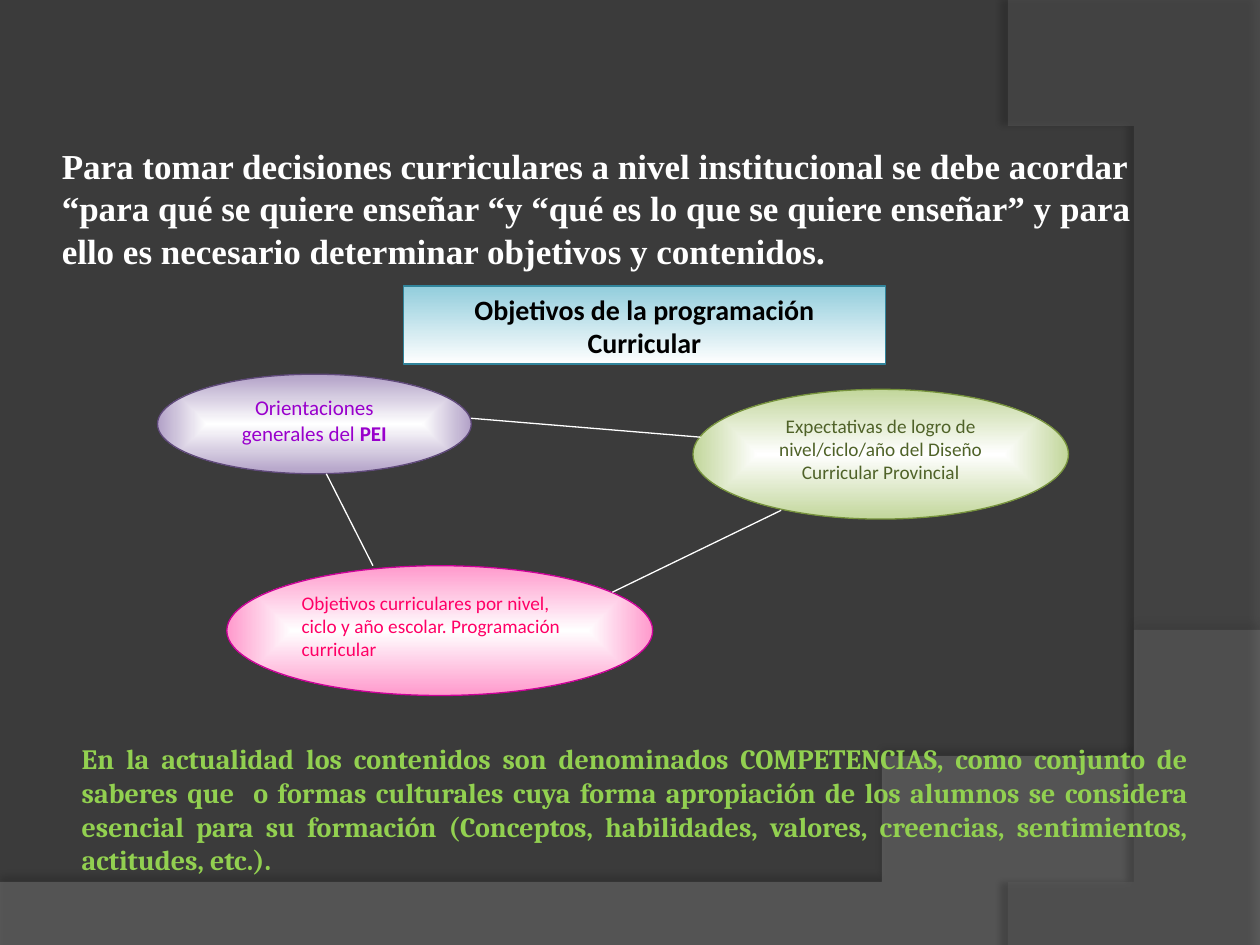
from dataclasses import dataclass

from pptx import Presentation
from pptx.dml.color import RGBColor
from pptx.enum.shapes import MSO_CONNECTOR, MSO_SHAPE
from pptx.enum.text import MSO_ANCHOR, MSO_AUTO_SIZE, PP_ALIGN
from pptx.oxml import parse_xml
from pptx.oxml.ns import nsdecls
from pptx.oxml.xmlchemy import OxmlElement
from pptx.util import Inches, Pt

Point = tuple[float, float]
STEPS = 60


@dataclass
class Swoosh:
    edge: list[Point]
    curve: list[Point]
    color: str
    alpha: int
    shadow_alpha: int
    shadow_distance: float
    shadow_angle: int


@dataclass
class Node:
    kind: MSO_SHAPE
    box: tuple[float, float, float, float]
    runs: list[tuple[str, bool]]
    size: int
    color: str
    grad: tuple[str, str]
    line: str
    align: PP_ALIGN = PP_ALIGN.CENTER


SWOOSHES = [
    Swoosh([(0, 7.05), (0, 7.5), (10, 7.5)],
           [(10, 5.2), (5.59, 7.29), (3.91, 7.19), (0, 7.05)],
           "7F7F7F", 45, 35, 3.5, 270),
    Swoosh([(10, 0.02), (10, 7.5)],
           [(8.21, 7.5), (9.35, 6.19), (10.18, 3), (8, 0)],
           "5E5E5E", 40, 45, 4, 180),
]

NODES = [
    Node(MSO_SHAPE.RECTANGLE, (3.2, 2.27, 3.83, 0.62),
         [("Objetivos de la programación Curricular", True)],
         16, "000000", ("92CDDC", "FFFFFF"), "31849B"),
    Node(MSO_SHAPE.OVAL, (1.25, 2.97, 2.49, 0.79),
         [("Orientaciones generales del ", False), ("PEI", True)],
         12, "9900CC", ("FFFFFF", "B2A1C7"), "5F497A"),
    Node(MSO_SHAPE.OVAL, (5.5, 3.09, 2.98, 1.03),
         [("Expectativas de logro de nivel/ciclo/año del Diseño Curricular Provincial", False)],
         11, "4F6228", ("FFFFFF", "C2D69B"), "76923C"),
    Node(MSO_SHAPE.OVAL, (1.8, 4.49, 3.38, 1.03),
         [("Objetivos curriculares por nivel, ciclo y año escolar. Programación curricular", False)],
         11, "FF0066", ("FFFFFF", "FF99CC"), "CC0099", PP_ALIGN.LEFT),
]

LINKS = [
    ((3.74, 3.32), (5.56, 3.47)),
    ((2.59, 3.76), (2.96, 4.49)),
    ((4.86, 4.7), (6.2, 4.05)),
]

LEAD = ("Para tomar decisiones curriculares a nivel institucional se debe acordar "
        "“para qué se quiere enseñar “y “qué es lo que se quiere enseñar” y para "
        "ello es necesario determinar objetivos y contenidos.")
CLOSING = ("En la actualidad los contenidos son denominados COMPETENCIAS, como conjunto de "
           "saberes que  o formas culturales cuya forma apropiación de los alumnos se considera "
           "esencial para su formación (Conceptos, habilidades, valores, creencias, sentimientos, "
           "actitudes, etc.).")


def rgb(value: str) -> RGBColor:
    return RGBColor.from_string(value)


def bezier(points: list[Point], t: float) -> Point:
    weights = ((1 - t) ** 3, 3 * t * (1 - t) ** 2, 3 * t * t * (1 - t), t ** 3)
    x, y = (sum(w * pt[i] for w, pt in zip(weights, points)) for i in (0, 1))
    return x, y


def style_run(r, font: str, size: int, color: str, bold: bool) -> None:
    r.font.name = font
    r.font.size = Pt(size)
    r.font.bold = bold
    r.font.color.rgb = rgb(color)


def draw_swoosh(slide, swoosh: Swoosh):
    points = swoosh.edge + [bezier(swoosh.curve, i / STEPS) for i in range(STEPS + 1)]
    builder = slide.shapes.build_freeform(*points[0], scale=Inches(1))
    builder.add_line_segments(points[1:], close=True)
    sp = builder.convert_to_shape()
    sp.fill.solid()
    sp.fill.fore_color.rgb = rgb(swoosh.color)
    sp.line.fill.background()
    alpha = OxmlElement("a:alpha")
    alpha.set("val", str(swoosh.alpha * 1000))
    sp.fill._xPr.find(".//" + "{http://schemas.openxmlformats.org/drawingml/2006/main}srgbClr").append(alpha)
    sp._element.spPr.append(parse_xml(
        f'<a:effectLst {nsdecls("a")}><a:outerShdw blurRad="{Pt(4)}" '
        f'dist="{Pt(swoosh.shadow_distance)}" dir="{swoosh.shadow_angle * 60000}" '
        f'algn="ctr" rotWithShape="0"><a:srgbClr val="000000">'
        f'<a:alpha val="{swoosh.shadow_alpha * 1000}"/></a:srgbClr></a:outerShdw></a:effectLst>'))
    return sp


def fill_gradient(sp, colors: tuple[str, str], radial: bool) -> None:
    direction = ('<a:path path="shape"><a:fillToRect l="50000" t="50000" r="50000" b="50000"/></a:path>'
                 if radial else '<a:lin ang="5400000" scaled="1"/>')
    start, end = colors
    sp.fill.background()
    spPr = sp._element.spPr
    old = spPr.find("{http://schemas.openxmlformats.org/drawingml/2006/main}noFill")
    spPr.replace(old, parse_xml(
        f'<a:gradFill {nsdecls("a")} rotWithShape="1"><a:gsLst>'
        f'<a:gs pos="0"><a:srgbClr val="{start}"/></a:gs>'
        f'<a:gs pos="100000"><a:srgbClr val="{end}"/></a:gs></a:gsLst>{direction}</a:gradFill>'))


def draw_node(slide, node: Node) -> None:
    sp = slide.shapes.add_shape(node.kind, *map(Inches, node.box))
    sp.shadow.inherit = False
    fill_gradient(sp, node.grad, node.kind == MSO_SHAPE.OVAL)
    sp.line.color.rgb = rgb(node.line)
    sp.line.width = Pt(0.75)
    tf = sp.text_frame
    tf.word_wrap = True
    tf.vertical_anchor = MSO_ANCHOR.TOP
    p = tf.paragraphs[0]
    p.alignment = node.align
    p.space_after = Pt(10)
    for text, bold in node.runs:
        r = p.add_run()
        r.text = text
        style_run(r, "Calibri", node.size, node.color, bold)


def draw_link(slide, start: Point, end: Point) -> None:
    line = slide.shapes.add_connector(MSO_CONNECTOR.STRAIGHT, *map(Inches, start + end))
    line.line.color.rgb = rgb("FFFFFF")
    line.line.width = Pt(0.75)
    line._element.spPr.append(OxmlElement("a:effectLst"))


def set_paragraph(sp, text: str, font: str, size: int, color: str,
                  align: PP_ALIGN, spacing: float) -> None:
    tf = sp.text_frame
    tf.text = text
    tf.word_wrap = True
    tf.auto_size = MSO_AUTO_SIZE.NONE
    tf.vertical_anchor = MSO_ANCHOR.TOP
    p = tf.paragraphs[0]
    p.alignment = align
    p.line_spacing = Pt(spacing)
    style_run(p.runs[0], font, size, color, True)


def main() -> None:
    prs = Presentation()
    prs.slide_width, prs.slide_height = Inches(10), Inches(7.5)
    s = prs.slides.add_slide(prs.slide_layouts[5])
    s.background.fill.solid()
    s.background.fill.fore_color.rgb = rgb("3B3B3B")

    for index, swoosh in enumerate(SWOOSHES):
        sp = draw_swoosh(s, swoosh)
        s.shapes._spTree.insert(2 + index, sp._element)

    title = s.shapes.title
    title.left, title.top, title.width, title.height = map(Inches, (0.39, 1.09, 9.14, 1.11))
    set_paragraph(title, LEAD, "Times New Roman", 20, "FFFFFF", PP_ALIGN.LEFT, 24.3)

    for node in NODES:
        draw_node(s, node)
    for start, end in LINKS:
        draw_link(s, start, end)

    closing = s.shapes.add_textbox(*map(Inches, (0.55, 5.55, 8.98, 1.72)))
    set_paragraph(closing, CLOSING, "Cambria", 16, "92D050", PP_ALIGN.JUSTIFY, 19.4)
    closing.text_frame.margin_top = Inches(0.33)
    closing.text_frame.margin_bottom = 0

    prs.save("out.pptx")


if __name__ == "__main__":
    main()
